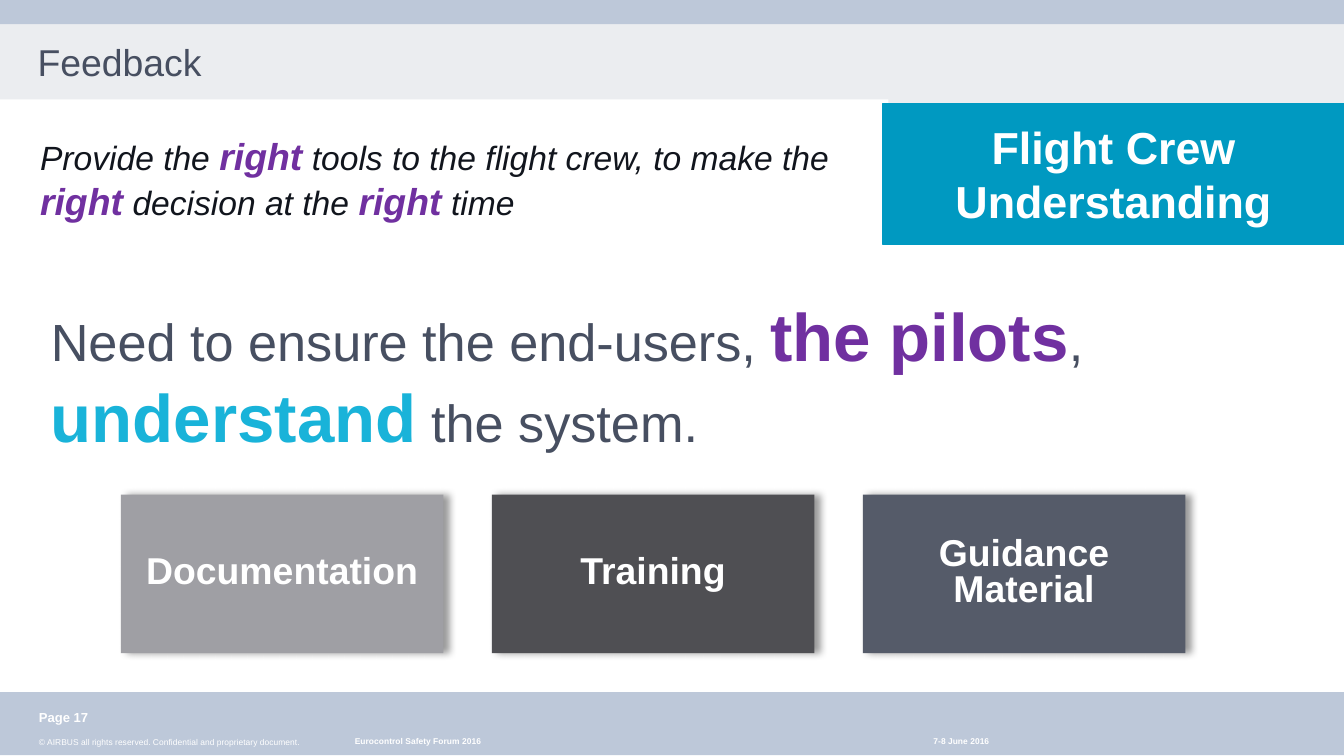
from lxml import etree
from pptx import Presentation
from pptx import util as u
from pptx.dml.color import RGBColor
from pptx.enum import shapes, text
from pptx.oxml import ns

WHITE = RGBColor(0xFF, 0xFF, 0xFF)
BAND = RGBColor(0xBD, 0xC8, 0xD9)
HEADER = RGBColor(0xEB, 0xED, 0xF0)
SLATE = RGBColor(0x47, 0x4F, 0x61)
INK = RGBColor(0x11, 0x15, 0x1D)
PURPLE = RGBColor(0x70, 0x30, 0xA0)
CYAN = RGBColor(0x19, 0xB3, 0xD9)
TEAL = RGBColor(0x00, 0x99, 0xC1)
CARDS = [
    ("Documentation", RGBColor(0x9F, 0x9F, 0xA4)),
    ("Training", RGBColor(0x4F, 0x4F, 0x53)),
    ("Guidance\nMaterial", RGBColor(0x55, 0x5B, 0x69)),
]

LEFT, CENTER, RIGHT = text.PP_ALIGN.LEFT, text.PP_ALIGN.CENTER, text.PP_ALIGN.RIGHT
TOP, MIDDLE = text.MSO_ANCHOR.TOP, text.MSO_ANCHOR.MIDDLE
NO_INSET = (0, 0, 0, 0)
DEFAULT_INSET = (0.1, 0.05, 0.1, 0.05)


def add_run(p, words, size, color=WHITE, bold=False, italic=False):
    for i, line in enumerate(words.split("\n")):
        if i:
            p.add_line_break()
        r = p.add_run()
        r.text = line
        r.font.name = "Arial"
        r.font.size = u.Pt(size)
        r.font.color.rgb = color
        r.font.bold = bold
        r.font.italic = italic


def set_frame(sp, inset=DEFAULT_INSET, anchor=TOP, align=LEFT, spacing=1.0):
    tf = sp.text_frame
    tf.word_wrap = True
    tf.vertical_anchor = anchor
    tf.margin_left, tf.margin_top, tf.margin_right, tf.margin_bottom = map(u.Inches, inset)
    p = tf.paragraphs[0]
    p.alignment = align
    p.line_spacing = spacing
    return p


def add_text(s, box, runs, **frame):
    p = set_frame(s.shapes.add_textbox(*map(u.Inches, box)), **frame)
    for words, style in runs:
        add_run(p, words, **style)


def paint(sp, color):
    sp.shadow.inherit = False
    sp.fill.solid()
    sp.fill.fore_color.rgb = color
    sp.line.fill.background()


def add_rect(s, box, color):
    sp = s.shapes.add_shape(shapes.MSO_SHAPE.RECTANGLE, *map(u.Inches, box))
    paint(sp, color)
    return sp


def add_shadow(sp):
    effects = sp._element.spPr.find(ns.qn("a:effectLst"))
    shadow = etree.SubElement(effects, ns.qn("a:outerShdw"), blurRad=str(u.Pt(4)),
                              dist=str(u.Pt(3)), dir="0", algn="l", rotWithShape="0")
    color = etree.SubElement(shadow, ns.qn("a:srgbClr"), val="000000")
    etree.SubElement(color, ns.qn("a:alpha"), val="40000")


def add_header(s):
    builder = s.shapes.build_freeform(0, u.Inches(0.18))
    corners = [(10, 0.18), (10, 0.83), (6.61, 0.83), (6.61, 0.74), (0, 0.74)]
    builder.add_line_segments([(u.Inches(x), u.Inches(y)) for x, y in corners])
    paint(builder.convert_to_shape(), HEADER)


def add_footer(s):
    fine = dict(size=4.5)
    bold = dict(size=4.5, bold=True)
    add_text(s, (0.29, 5.48, 2.36, 0.13),
             [("© AIRBUS all rights reserved. Confidential and proprietary document.", fine)],
             inset=(0, 0, 0.1, 0.05), anchor=MIDDLE)
    add_text(s, (6.57, 5.48, 0.79, 0.13), [("7-8 June 2016", bold)],
             inset=NO_INSET, align=RIGHT)
    add_text(s, (2.64, 5.48, 3.94, 0.13), [("Eurocontrol Safety Forum 2016", bold)],
             inset=NO_INSET)
    add_text(s, (0.29, 5.23, 1.18, 0.18), [("Page 17", dict(size=7, bold=True))],
             inset=(0, 0.05, 0, 0.05))


def add_card(s, box, label, color):
    sp = add_rect(s, box, color)
    add_shadow(sp)
    p = set_frame(sp, anchor=MIDDLE, align=CENTER, spacing=0.8)
    add_run(p, label, 20, bold=True)


def main():
    prs = Presentation()
    prs.slide_width, prs.slide_height = u.Inches(10), u.Inches(10 * 9 / 16)
    s = prs.slides.add_slide(prs.slide_layouts[6])

    add_header(s)
    add_rect(s, (0, 5.15, 10, 0.47), BAND)
    add_rect(s, (0, 0, 10, 0.18), BAND)
    add_footer(s)

    plain = dict(size=28, color=SLATE)
    add_text(s, (0.28, 2.14, 8.66, 2.64), [
        ("Need to ensure the end-users, ", plain),
        ("the pilots", dict(size=36, color=PURPLE, bold=True)),
        (", ", plain),
        ("understand", dict(size=36, color=CYAN, bold=True)),
        (" the system.", plain),
    ])
    add_text(s, (0.28, 0.24, 9.44, 0.5), [("Feedback", dict(size=20, color=SLATE))],
             inset=NO_INSET, anchor=MIDDLE, spacing=0.8)

    banner = add_rect(s, (6.57, 0.77, 3.43, 1.05), TEAL)
    banner.line.color.rgb = TEAL
    banner.line.width = u.Pt(0.75)
    p = set_frame(banner, inset=(0.12, 0.12, 0.12, 0.12), align=CENTER)
    add_run(p, "Flight Crew Understanding", 24, bold=True)

    quote = dict(size=18, color=INK, italic=True)
    right = ("right", dict(size=20, color=PURPLE, bold=True, italic=True))
    add_text(s, (0.2, 0.94, 6.22, 0.77), [
        ("Provide the ", quote), right,
        (" tools to the flight crew, to make the ", quote), right,
        (" decision at the ", quote), right,
        (" time", quote),
    ])

    for i, (label, color) in enumerate(CARDS):
        add_card(s, (0.9 + 2.76 * i, 3.68, 2.4, 1.18), label, color)

    prs.save("out.pptx")


if __name__ == "__main__":
    main()
